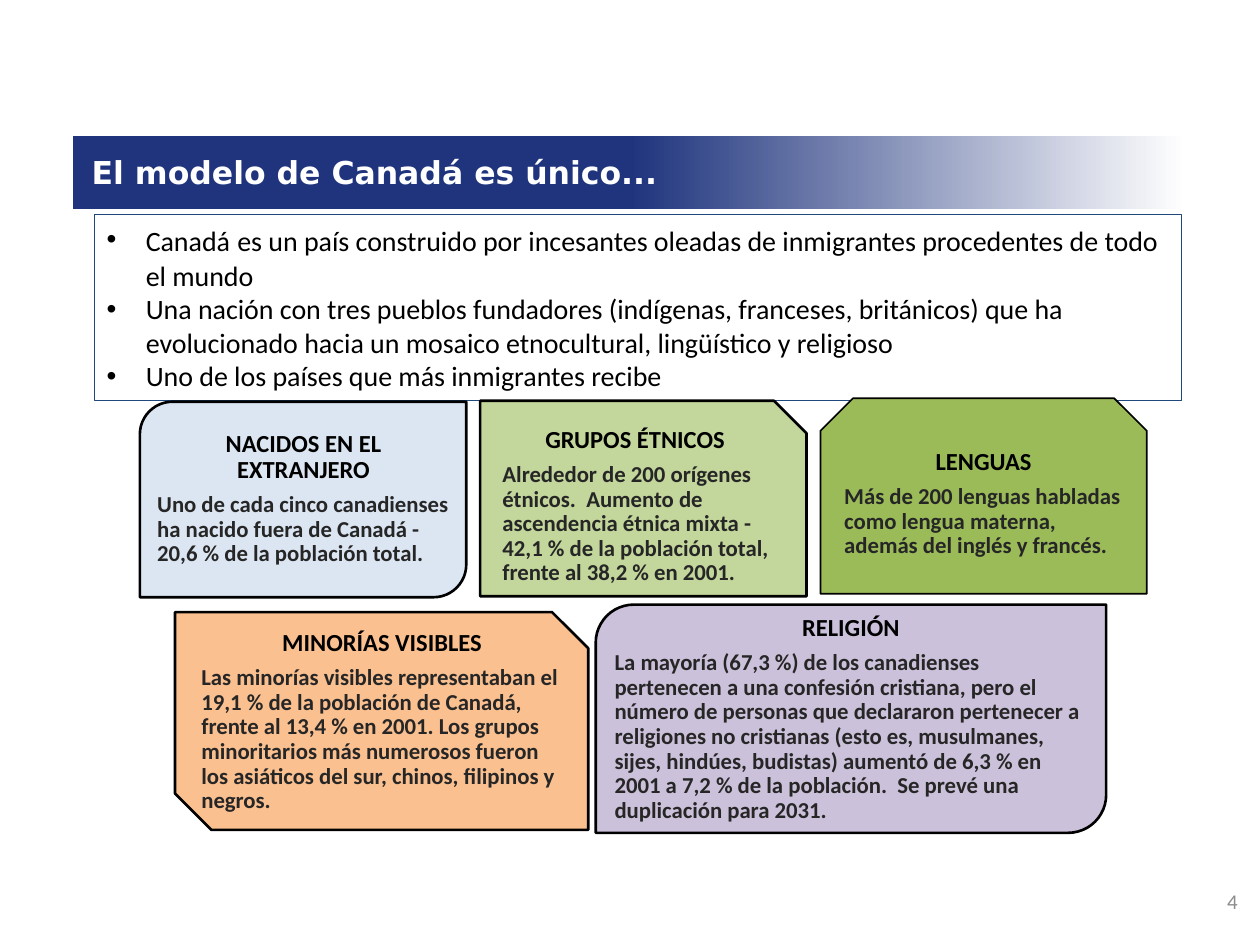
"""Build the slide on Canada's unique model: title bar, bullets and five fact cards."""
from dataclasses import dataclass

import lxml.etree
import pptx
import pptx.dml.color
import pptx.enum.shapes
import pptx.enum.text
import pptx.oxml.ns
import pptx.util

Cm = pptx.util.Cm
Pt = pptx.util.Pt
RGBColor = pptx.dml.color.RGBColor
Shape = pptx.enum.shapes.MSO_SHAPE
Align = pptx.enum.text.PP_ALIGN
Anchor = pptx.enum.text.MSO_ANCHOR

NAVY = RGBColor(0x1F, 0x34, 0x7D)
BORDER_BLUE = RGBColor(0x1F, 0x49, 0x7D)
WHITE = RGBColor(0xFF, 0xFF, 0xFF)
BLACK = RGBColor(0, 0, 0)
CHARCOAL = RGBColor(0x26, 0x26, 0x26)
GRAY = RGBColor(0x8C, 0x8C, 0x8C)
PALE_BLUE = RGBColor(0xDC, 0xE6, 0xF2)
PALE_GREEN = RGBColor(0xC3, 0xD6, 0x9B)
GREEN = RGBColor(0x9B, 0xBB, 0x59)
ORANGE = RGBColor(0xFA, 0xC0, 0x90)
LILAC = RGBColor(0xCC, 0xC1, 0xDA)


@dataclass(frozen=True)
class Box:
    left: float
    top: float
    width: float
    height: float

    def lengths(self) -> tuple:
        return Cm(self.left), Cm(self.top), Cm(self.width), Cm(self.height)


@dataclass(frozen=True)
class Card:
    outline: Shape
    box: Box
    text_box: Box
    color: RGBColor
    heading: str
    body: str
    line_width: float = 1.5
    body_indent: float = 0


CARDS = [
    Card(Shape.ROUND_2_DIAG_RECTANGLE, Box(2.82, 8.1, 6.58, 3.94), Box(3.02, 8.28, 6.2, 3.56),
         PALE_BLUE, "NACIDOS EN EL EXTRANJERO",
         "Uno de cada cinco canadienses ha nacido fuera de Canadá - 20,6 % de la población total."),
    Card(Shape.SNIP_1_RECTANGLE, Box(9.68, 8.08, 6.58, 3.94), Box(9.68, 8.41, 6.25, 3.61),
         PALE_GREEN, "GRUPOS ÉTNICOS",
         "Alrededor de 200 orígenes étnicos.  Aumento de ascendencia étnica mixta - "
         "42,1 % de la población total, frente al 38,2 % en 2001.", body_indent=0.3),
    Card(Shape.SNIP_2_SAME_RECTANGLE, Box(16.54, 8.03, 6.58, 3.94), Box(16.87, 8.36, 5.92, 3.61),
         GREEN, "LENGUAS",
         "Más de 200 lenguas habladas como lengua materna, además del inglés y francés.",
         line_width=1),
    Card(Shape.SNIP_2_DIAG_RECTANGLE, Box(3.53, 12.34, 8.33, 4.39), Box(3.91, 12.73, 7.59, 3.66),
         ORANGE, "MINORÍAS VISIBLES",
         "Las minorías visibles representaban el 19,1 % de la población de Canadá, frente al "
         "13,4 % en 2001. Los grupos minoritarios más numerosos fueron los asiáticos del sur, "
         "chinos, filipinos y negros."),
    Card(Shape.ROUND_2_DIAG_RECTANGLE, Box(12.01, 12.19, 10.29, 4.6), Box(12.24, 12.42, 9.83, 4.17),
         LILAC, "RELIGIÓN",
         "La mayoría (67,3 %) de los canadienses pertenecen a una confesión cristiana, pero el "
         "número de personas que declararon pertenecer a religiones no cristianas (esto es, "
         "musulmanes, sijes, hindúes, budistas) aumentó de 6,3 % en 2001 a 7,2 % de la "
         "población.  Se prevé una duplicación para 2031."),
]

BULLETS = [
    ["Canadá", " ", "es un país construido por incesantes oleadas de inmigrantes "
     "procedentes de todo el mundo"],
    ["Una nación con tres pueblos fundadores (indígenas, franceses, británicos) que ha "
     "evolucionado hacia un mosaico etnocultural, lingüístico y religioso"],
    ["Uno de los países que más inmigrantes recibe"],
]


def style(paragraph, size: float, color: RGBColor, bold: bool = False,
          name: str = "Calibri", align: Align = Align.LEFT) -> None:
    paragraph.alignment = align
    font = paragraph.font
    font.size, font.bold, font.name = Pt(size), bold, name
    font.color.rgb = color


def add_panel(slide, outline: Shape, box: Box, fill: RGBColor, line: RGBColor, width: float):
    shape = slide.shapes.add_shape(outline, *box.lengths())
    shape.shadow.inherit = False
    shape.fill.solid()
    shape.fill.fore_color.rgb = fill
    shape.line.color.rgb = line
    shape.line.width = Pt(width)
    return shape


def add_text_frame(slide, box: Box):
    frame = slide.shapes.add_textbox(*box.lengths()).text_frame
    frame.word_wrap = True
    frame.vertical_anchor = Anchor.MIDDLE
    return frame


def add_title(slide) -> None:
    bar = slide.shapes.add_shape(Shape.RECTANGLE, *Box(1.47, 2.74, 22.43, 1.47).lengths())
    bar.shadow.inherit = False
    bar.line.fill.background()
    bar.fill.gradient()
    bar.fill.gradient_angle = 0
    for stop, position, color in zip(bar.fill.gradient_stops, (0.5, 1), (NAVY, WHITE)):
        stop.position = position
        stop.color.rgb = color
    paragraph = add_text_frame(slide, Box(1.6, 2.62, 22.23, 1.7)).paragraphs[0]
    paragraph.text = "El modelo de Canadá es único..."
    style(paragraph, 18, WHITE, bold=True, name="DejaVu Sans")


def add_bullets(slide) -> None:
    panel = add_panel(slide, Shape.RECTANGLE, Box(1.9, 4.32, 21.92, 3.76), WHITE, BORDER_BLUE, 0.75)
    frame = panel.text_frame
    frame.word_wrap = True
    frame.vertical_anchor = Anchor.TOP
    for index, texts in enumerate(BULLETS):
        paragraph = frame.add_paragraph() if index else frame.paragraphs[0]
        properties = paragraph._p.get_or_add_pPr()
        properties.set("marL", str(Cm(0.79)))
        properties.set("indent", str(Cm(-0.79)))
        bullet_font = lxml.etree.SubElement(properties, pptx.oxml.ns.qn("a:buFont"))
        bullet_font.set("typeface", "Arial")
        lxml.etree.SubElement(properties, pptx.oxml.ns.qn("a:buChar")).set("char", "•")
        style(paragraph, 16, BLACK)
        for text in texts:
            run = paragraph.add_run()
            run.text = text
            if text == " ":
                run.font.size = Pt(18)


def add_card(slide, card: Card) -> None:
    add_panel(slide, card.outline, card.box, card.color, BLACK, card.line_width)
    frame = add_text_frame(slide, card.text_box)
    frame.margin_left = frame.margin_right = frame.margin_top = frame.margin_bottom = Cm(0.15)
    heading, body = frame.paragraphs[0], frame.add_paragraph()
    heading.text, body.text = card.heading, card.body
    for paragraph in (heading, body):
        paragraph.line_spacing = 0.9
        paragraph.space_after = Pt(5)
    body._p.get_or_add_pPr().set("marL", str(Cm(card.body_indent)))
    style(heading, 14, BLACK, bold=True, align=Align.CENTER)
    style(body, 13, CHARCOAL, bold=True)


def main() -> None:
    presentation = pptx.Presentation()
    presentation.slide_width, presentation.slide_height = Cm(25.4), Cm(19.05)
    slide = presentation.slides.add_slide(presentation.slide_layouts[6])
    add_title(slide)
    number = add_text_frame(slide, Box(22.86, 17.65, 2.34, 1.02)).paragraphs[0]
    number.text = "4"
    style(number, 12, GRAY, align=Align.RIGHT)
    add_bullets(slide)
    for card in CARDS:
        add_card(slide, card)
    presentation.save("out.pptx")


if __name__ == "__main__":
    main()
